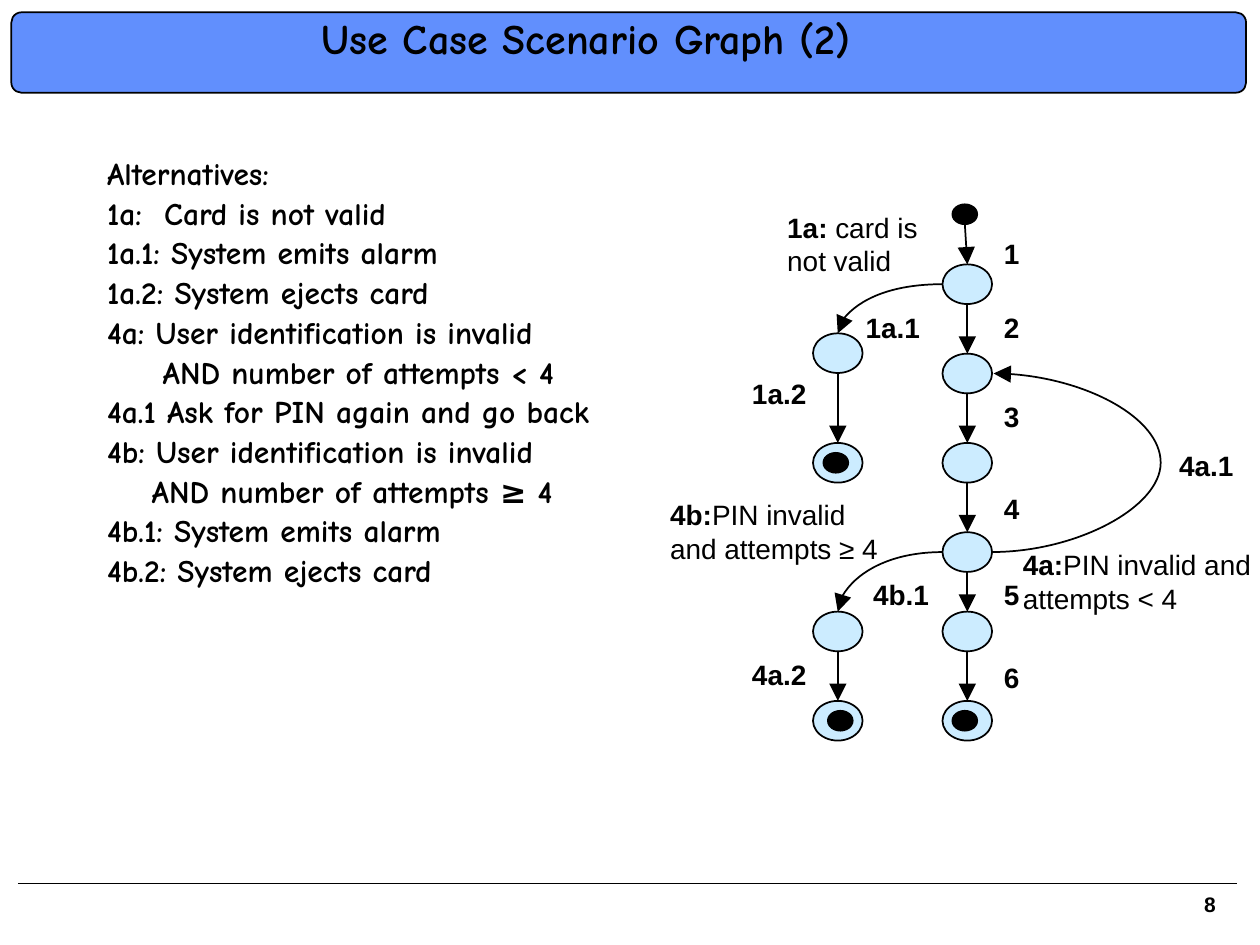
"""Build the slide with the use case scenario graph and its alternatives."""
from dataclasses import dataclass

from lxml import etree
from pptx import Presentation
from pptx.dml.color import RGBColor
from pptx.enum.shapes import MSO_CONNECTOR, MSO_SHAPE
from pptx.enum.text import PP_ALIGN
from pptx.oxml.ns import qn
from pptx.util import Cm, Pt

ELLIPSE, ROUNDED = MSO_SHAPE.OVAL, MSO_SHAPE.ROUNDED_RECTANGLE
STRAIGHT, CURVE = MSO_CONNECTOR.STRAIGHT, MSO_CONNECTOR.CURVE
LEFT, RIGHT = PP_ALIGN.LEFT, PP_ALIGN.RIGHT


@dataclass(frozen=True)
class Theme:
    """Colours, fonts and type sizes."""
    ink: RGBColor = RGBColor(0, 0, 0)
    banner: RGBColor = RGBColor(0x61, 0x8F, 0xFD)
    node: RGBColor = RGBColor(0xCC, 0xEC, 0xFF)
    hand: str = "Comic Neue"
    sans: str = "Arial"
    title: int = 24
    body: int = 18
    label: int = 16
    number: int = 12


THEME = Theme()
TITLE = "Use Case Scenario Graph (2)"
PAGE_NUMBER = "8"
HANGING = 0.79
ALTERNATIVES = [
    ("Alternatives:", HANGING, -HANGING),
    ("1a:\tCard is not valid", 1.15, -1.15),
    ("1a.1: System emits alarm", HANGING, -HANGING),
    ("1a.2: System ejects card", HANGING, -HANGING),
    ("4a: User identification is invalid", HANGING, -HANGING),
    ("AND number of attempts < 4", 1.12, 0),
    ("4a.1 Ask for PIN again and go back", HANGING, -HANGING),
    ("4b: User identification is invalid", HANGING, -HANGING),
    ("AND number of attempts ≥ 4", 0.9, 0),
    ("4b.1: System emits alarm", HANGING, -HANGING),
    ("4b.2: System ejects card", HANGING, -HANGING),
]

NODE_SIZE, DOT_SIZE = (1.0, 0.8), (0.5, 0.4)
MAIN_X, SIDE_X = 19.5, 16.89
MAIN_ROWS = [5.73, 7.53, 9.33, 11.13, 12.73, 14.53]
SIDE_ROWS = [7.12, 9.33, 12.73, 14.53]
SIDE_BRANCHES = [(MAIN_ROWS[0], SIDE_ROWS[0]), (MAIN_ROWS[3], SIDE_ROWS[2])]
START = (19.45, 4.32)
FINAL_DOTS = [(16.85, 9.33), (16.94, 14.53), (19.45, 14.53)]
LOOP_REACH, LOOP_WIDTH = 3.4, 0.03

STEP_X = 19.99
STEP_LABELS = [("1", 4.64), ("2", 6.13), ("3", 7.92), ("4", 9.78), ("5", 11.52), ("6", 13.18)]
BRANCH_LABELS = [
    ("1a.1", 17.2, 6.13), ("4b.1", 17.35, 11.52), ("1a.2", 14.91, 7.47),
    ("4a.2", 14.91, 13.13), ("4a.1", 23.52, 8.92),
]
CONDITIONS = [
    ("1a:", " card is", "not valid", 15.62, 4.11, 3.15),
    ("4b:", "PIN invalid", "and attempts ≥ 4", 13.26, 9.91, 4.72),
    ("4a:", "PIN invalid and", "attempts < 4", 20.37, 10.91, 5.11),
]


def add_filled(slide, kind, left, top, width, height, color):
    shape = slide.shapes.add_shape(kind, Cm(left), Cm(top), Cm(width), Cm(height))
    shape.shadow.inherit = False
    shape.fill.solid()
    shape.fill.fore_color.rgb = color
    shape.line.color.rgb = THEME.ink
    shape.line.width = Pt(1)
    return shape


def add_ellipse(slide, center, size, color):
    (x, y), (width, height) = center, size
    add_filled(slide, ELLIPSE, x - width / 2, y - height / 2, width, height, color)


def add_line(slide, start, end, kind=STRAIGHT, arrow=True):
    connector = slide.shapes.add_connector(kind, *(Cm(value) for value in (*start, *end)))
    connector.line.color.rgb = THEME.ink
    connector.line.width = Pt(1)
    properties = connector._element.spPr
    if arrow:
        etree.SubElement(properties.find(qn("a:ln")), qn("a:tailEnd"),
                         type="triangle", w="lg", len="lg")
    etree.SubElement(properties, qn("a:effectLst"))
    return connector


def add_text(slide, box, paragraphs, size, font, wrap=False, margins=(0.25, 0.13), align=LEFT):
    shape = slide.shapes.add_textbox(*(Cm(value) for value in box))
    frame = shape.text_frame
    frame.word_wrap = wrap
    frame.margin_left = frame.margin_right = Cm(margins[0])
    frame.margin_top = frame.margin_bottom = Cm(margins[1])
    for index, runs in enumerate(paragraphs):
        paragraph = frame.add_paragraph() if index else frame.paragraphs[0]
        paragraph.alignment = align
        for text, bold in runs:
            run = paragraph.add_run()
            run.text = text
            run.font.size = Pt(size)
            run.font.name = font
            run.font.bold = bold
            run.font.color.rgb = THEME.ink
    return frame


def add_page(slide):
    add_line(slide, (0.36, 17.81), (24.94, 17.81), arrow=False)
    banner = add_filled(slide, ROUNDED, 0.23, 0.25, 24.89, 1.62, THEME.banner)
    banner.adjustments[0] = 0.125
    number = add_text(slide, (23.7, 17.98, 0.99, 0.58), [[(PAGE_NUMBER, True)]],
                      THEME.number, THEME.sans, margins=(0.18, 0.08), align=RIGHT)
    number.paragraphs[0].line_spacing = 0.85
    title = add_text(slide, (6.3, 0.32, 18.9, 1.3), [[(TITLE, True)]],
                     THEME.title, THEME.hand, wrap=True, margins=(0.18, 0.08))
    title.paragraphs[0].line_spacing = 0.87


def add_alternatives(slide):
    lines = [[(text, True)] for text, _, _ in ALTERNATIVES]
    frame = add_text(slide, (1.91, 3.12, 10.6, 13.82), lines, THEME.body, THEME.hand, wrap=True)
    for paragraph, (_, margin, indent) in zip(frame.paragraphs, ALTERNATIVES):
        paragraph.line_spacing = 0.8
        paragraph.space_before = Pt(5.4)
        properties = paragraph._p.get_or_add_pPr()
        properties.set("marL", str(Cm(margin)))
        properties.set("indent", str(Cm(indent)))


def add_graph(slide):
    half_width, half_height = (length / 2 for length in NODE_SIZE)
    for x, rows in ((MAIN_X, MAIN_ROWS), (SIDE_X, SIDE_ROWS)):
        for y in rows:
            add_ellipse(slide, (x, y), NODE_SIZE, THEME.node)
    for center in [START, *FINAL_DOTS]:
        add_ellipse(slide, center, DOT_SIZE, THEME.ink)

    add_line(slide, (START[0], START[1] + DOT_SIZE[1] / 2), (MAIN_X, MAIN_ROWS[0] - half_height))
    steps = [(MAIN_X, *pair) for pair in zip(MAIN_ROWS, MAIN_ROWS[1:])]
    steps += [(SIDE_X, *pair) for pair in zip(SIDE_ROWS[::2], SIDE_ROWS[1::2])]
    for x, upper, lower in steps:
        add_line(slide, (x, upper + half_height), (x, lower - half_height))
    for origin, target in SIDE_BRANCHES:
        branch = add_line(slide, (MAIN_X - half_width, origin), (SIDE_X, target - half_height), CURVE)
        branch._element.spPr.find(qn("a:prstGeom")).set("prst", "curvedConnector2")

    right = MAIN_X + half_width
    loop = add_line(slide, (right, MAIN_ROWS[3]), (right + LOOP_WIDTH, MAIN_ROWS[1]), CURVE)
    adjustments = loop._element.spPr.find(qn("a:prstGeom")).get_or_add_avLst()
    reach = round(LOOP_REACH / LOOP_WIDTH * 100000)
    etree.SubElement(adjustments, qn("a:gd"), name="adj1", fmla=f"val {reach}")


def add_labels(slide):
    labels = [(text, STEP_X, top, 0.81) for text, top in STEP_LABELS]
    labels += [(text, left, top, 1.8) for text, left, top in BRANCH_LABELS]
    for text, left, top, width in labels:
        add_text(slide, (left, top, width, 0.94), [[(text, True)]], THEME.label, THEME.sans)
    for name, first, second, left, top, width in CONDITIONS:
        lines = [[(name, True), (first, False)], [(second, False)]]
        add_text(slide, (left, top, width, 1.63), lines, THEME.label, THEME.sans)


def main():
    presentation = Presentation()
    presentation.slide_width, presentation.slide_height = Cm(25.4), Cm(19.05)
    slide = presentation.slides.add_slide(presentation.slide_layouts[6])
    for add_part in (add_page, add_alternatives, add_graph, add_labels):
        add_part(slide)
    presentation.save("out.pptx")


if __name__ == "__main__":
    main()
